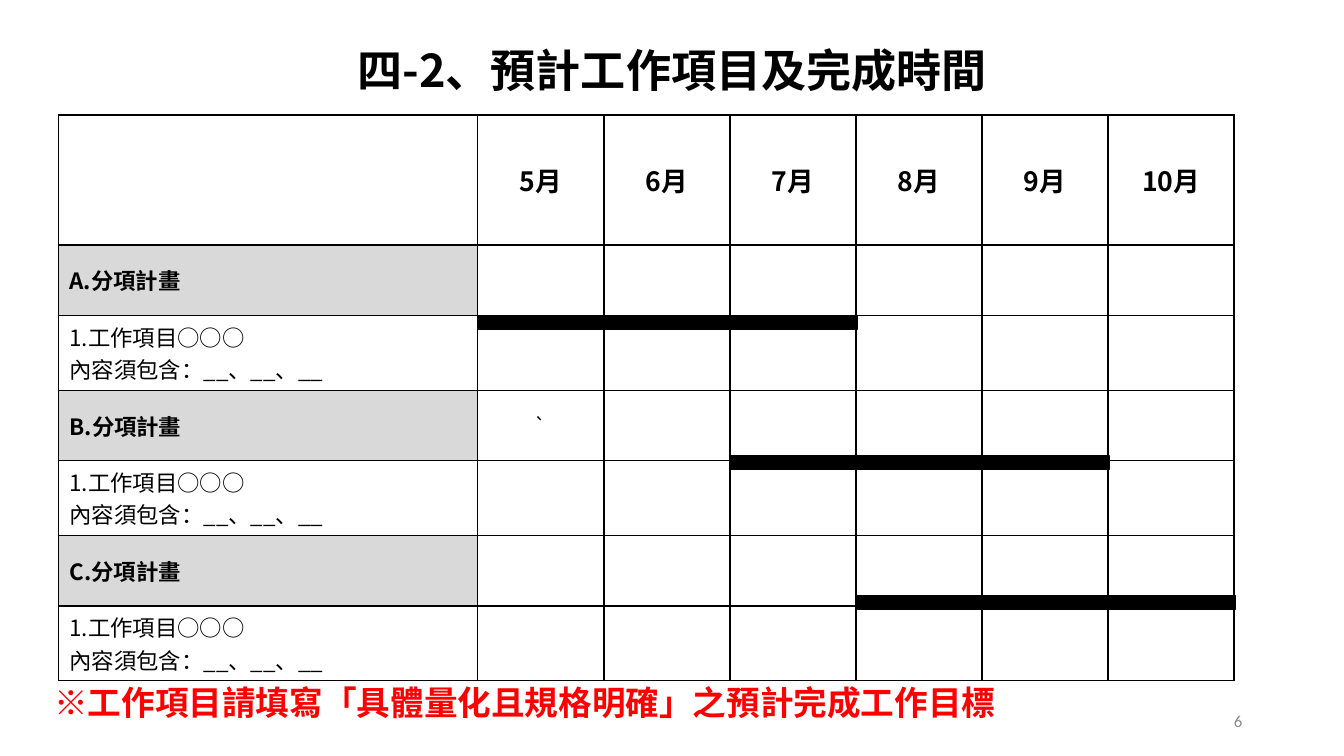
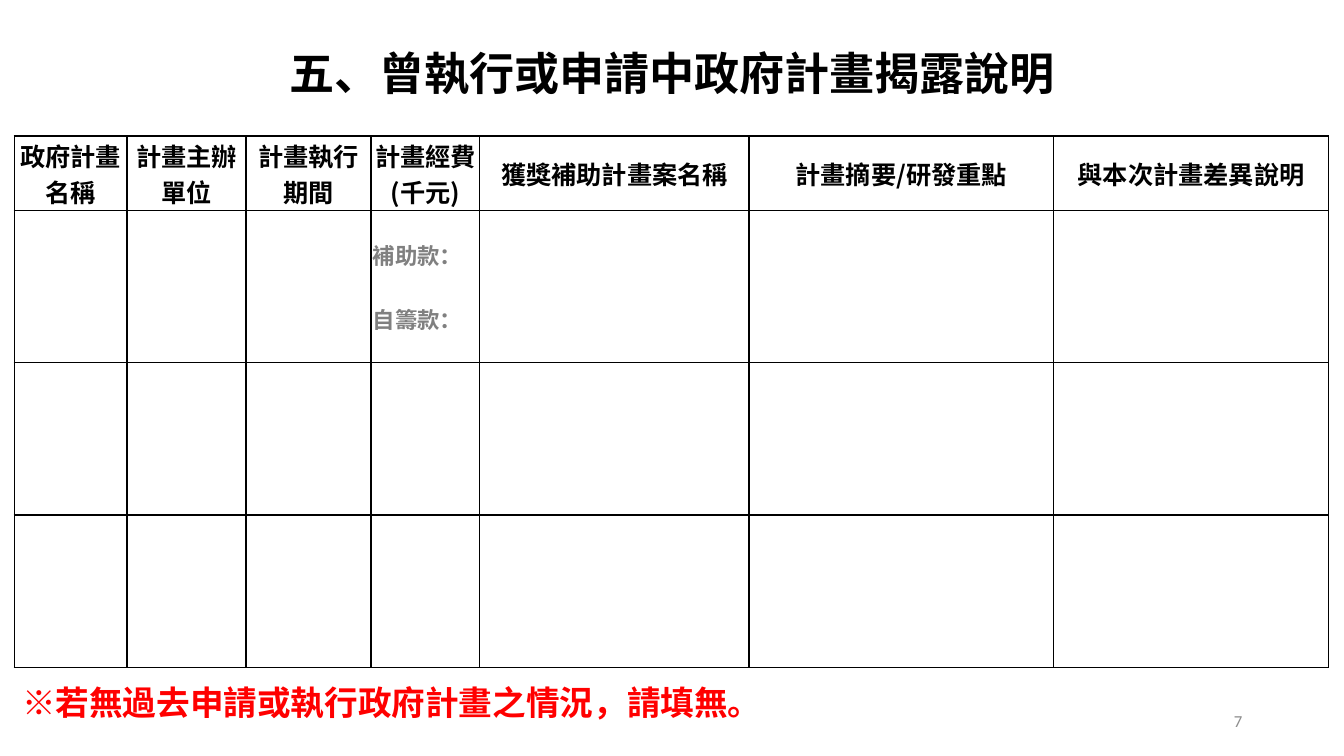
"""Build two planning slides: a work schedule and a disclosure of government projects."""
from lxml.etree import SubElement
from pptx import Presentation
from pptx.dml.color import RGBColor
from pptx.enum.shapes import MSO_SHAPE
from pptx.enum.text import MSO_ANCHOR, MSO_AUTO_SIZE, PP_ALIGN
from pptx.oxml.ns import qn
from pptx.util import Inches, Pt

COLORS = {"black": "000000", "band": "D9D9D9", "hint": "808080", "number": "8C8C8C", "note": "FF0000"}
FONT = "Noto Sans CJK SC"
CENTER, LEFT, RIGHT = PP_ALIGN.CENTER, PP_ALIGN.LEFT, PP_ALIGN.RIGHT
TASK = "1.工作項目○○○\v內容須包含：__、__、__"
MONTHS = ["5月", "6月", "7月", "8月", "9月", "10月"]
HEADERS = ["政府計畫名稱", "計畫主辦單位", "計畫執行期間", "計畫經費(千元)",
           "獲獎補助計畫案名稱", "計畫摘要/研發重點", "與本次計畫差異說明"]
SLIDES = [
    {"title": "四-2、預計工作項目及完成時間", "title_top": 0.29, "number": "6", "note_align": RIGHT,
     "note": "※工作項目請填寫「具體量化且規格明確」之預計完成工作目標",
     "at": (0.58, 1.14), "cols": [4.16] + [1.25] * 6, "rows": [1.29] + [0.7] * 6, "insets": (0.11, 0.05)},
    {"title": "五、曾執行或申請中政府計畫揭露說明", "title_top": 0.32, "number": "7", "note_align": LEFT,
     "note": "※若無過去申請或執行政府計畫之情況，請填無。",
     "at": (0.14, 1.35), "cols": [1.12, 1.18, 1.24, 1.08, 2.67, 3.02, 2.73],
     "rows": [0.74] + [1.51] * 3, "insets": (0.02, 0)},
]


def write(tf, text, size, color="black", bold=True, align=CENTER, font=FONT):
    tf.text = text
    for p in tf.paragraphs:
        p.alignment = align
        for r in p.runs:
            r.font.size = Pt(size)
            r.font.bold = bold
            r.font.name = font
            r.font.color.rgb = RGBColor.from_string(COLORS[color])
            SubElement(r.font._element, qn("a:ea"), typeface=font)


def add_grid(s, at, cols, rows, insets):
    frame = s.shapes.add_table(len(rows), len(cols), Inches(at[0]), Inches(at[1]),
                               Inches(sum(cols)), Inches(sum(rows)))
    table = frame.table
    table.first_row = table.horz_banding = False
    for col, width in zip(table.columns, cols):
        col.width = Inches(width)
    for row, height in zip(table.rows, rows):
        row.height = Inches(height)
    for cell in table.iter_cells():
        cell.margin_left = cell.margin_right = Inches(insets[0])
        cell.margin_top = cell.margin_bottom = Inches(insets[1])
        cell.vertical_anchor = MSO_ANCHOR.MIDDLE
        tc_pr = cell._tc.get_or_add_tcPr()
        for side in ("lnL", "lnR", "lnT", "lnB"):
            ln = SubElement(tc_pr, qn(f"a:{side}"), w=str(Pt(1)))
            SubElement(SubElement(ln, qn("a:solidFill")), qn("a:srgbClr"), val=COLORS["black"])
        cell.fill.background()
    return table


prs = Presentation()
prs.slide_width, prs.slide_height = Inches(13.33), Inches(7.5)

slides, tables = [], []
for page in SLIDES:
    s = prs.slides.add_slide(prs.slide_layouts[5])
    slides.append(s)
    tables.append(add_grid(s, page["at"], page["cols"], page["rows"], page["insets"]))

    title = s.shapes.title
    title.left, title.top = Inches(0.45), Inches(page["title_top"])
    title.width, title.height = Inches(12.43), Inches(0.8)
    title.text_frame.auto_size = MSO_AUTO_SIZE.NONE
    title.text_frame.vertical_anchor = MSO_ANCHOR.MIDDLE
    write(title.text_frame, page["title"], 32.2)

    number = s.shapes.add_textbox(Inches(9.42), Inches(6.95), Inches(3), Inches(0.4))
    write(number.text_frame, page["number"], 12, "number", False, RIGHT, "Calibri")
    note = s.shapes.add_textbox(Inches(0.12), Inches(6.68), Inches(9.85), Inches(0.54))
    write(note.text_frame, page["note"], 24, "note", align=page["note_align"])
    note.text_frame.paragraphs[0].line_spacing = 1.1
    for sp in (number, note):
        sp.text_frame.word_wrap = True
        sp.text_frame.vertical_anchor = MSO_ANCHOR.MIDDLE

schedule, projects = tables
for col, month in enumerate(MONTHS, 1):
    write(schedule.cell(0, col).text_frame, month, 19)
for i, letter in enumerate("ABC"):
    heading = schedule.cell(2 * i + 1, 0)
    heading.fill.solid()
    heading.fill.fore_color.rgb = RGBColor.from_string(COLORS["band"])
    write(heading.text_frame, f"{letter}.分項計畫", 16, align=LEFT)
    task = schedule.cell(2 * i + 2, 0).text_frame
    write(task, "", 16)
    task.paragraphs[0].text = TASK
    for r in task.paragraphs[0].runs:
        r.font.size = Pt(16)
        r.font.name = FONT
        SubElement(r.font._element, qn("a:ea"), typeface=FONT)
    task.paragraphs[0].alignment = LEFT
write(schedule.cell(3, 1).text_frame, "`", 14, bold=False)

for i, start in enumerate((0, 2, 3)):
    bar = slides[0].shapes.add_shape(MSO_SHAPE.RECTANGLE, Inches(4.74 + 1.25 * start),
                                     Inches(3.13 + 1.39 * i), Inches(3.76), Inches(0.14))
    bar.shadow.inherit = False
    bar.fill.solid()
    bar.fill.fore_color.rgb = bar.line.color.rgb = RGBColor.from_string(COLORS["black"])
    bar.line.width = Pt(1)

for col, header in enumerate(HEADERS):
    tf = projects.cell(0, col).text_frame
    write(tf, header, 18)
    tf.paragraphs[0].line_spacing = Pt(26)
funding = projects.cell(1, 3).text_frame
write(funding, "補助款：\n自籌款：", 16, "hint", align=LEFT)
funding.paragraphs[1].space_before = Pt(23)

prs.save("out.pptx")
